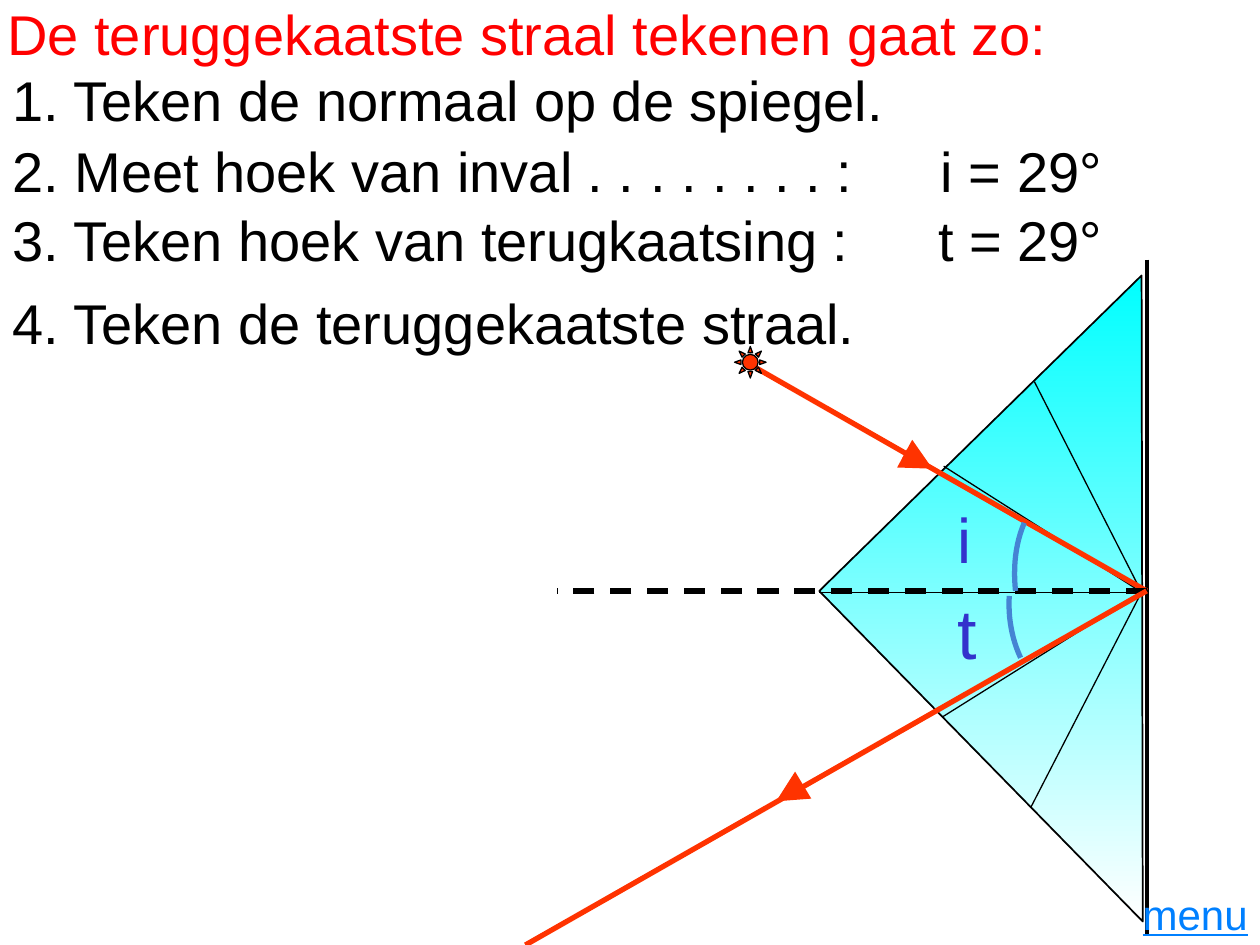
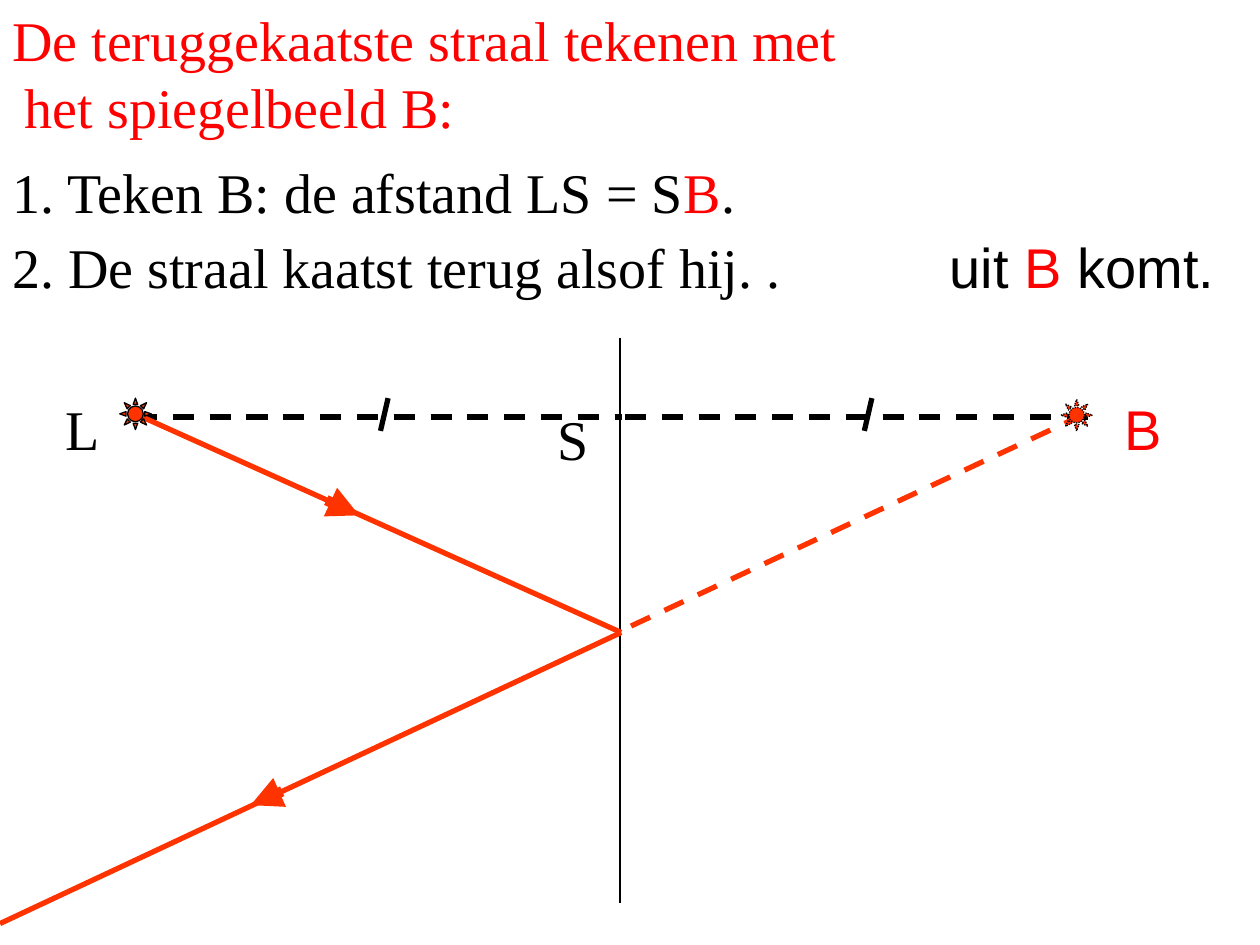
from lxml import etree
from pptx import Presentation
from pptx.dml.color import RGBColor
from pptx.enum.dml import MSO_LINE as DASH
from pptx.enum.shapes import MSO_CONNECTOR, MSO_SHAPE as SHAPE
from pptx.enum.text import MSO_ANCHOR as ANCHOR, PP_ALIGN as ALIGN
from pptx.oxml.ns import qn
from pptx.util import Inches, Pt

BLACK = RGBColor(0x00, 0x00, 0x00)
RED = RGBColor(0xFF, 0x00, 0x00)
RAY_RED = RGBColor(0xFF, 0x33, 0x00)
CYAN = RGBColor(0x00, 0xFF, 0xFF)
WHITE = RGBColor(0xFF, 0xFF, 0xFF)
ARC_BLUE = RGBColor(0x45, 0x84, 0xD3)
LABEL_BLUE = RGBColor(0x33, 0x33, 0xCC)
MENU_BLUE = RGBColor(0x00, 0x80, 0xFF)
SANS, SERIF = "Arial", "Times New Roman"


def add_line(page, start, end, color=BLACK, width=3, dash=None, arrow=False):
    line = page.shapes.add_connector(
        MSO_CONNECTOR.STRAIGHT, *(Inches(value) for value in (*start, *end)))
    line.line.color.rgb = color
    line.line.width = Pt(width)
    if dash:
        line.line.dash_style = dash
    if arrow:
        etree.SubElement(line.line._get_or_add_ln(), qn("a:tailEnd"), type="triangle")
    etree.SubElement(line._element.spPr, qn("a:effectLst"))


def add_text(page, area, parts, font=SANS, size=32, anchor=ANCHOR.MIDDLE):
    """Write one paragraph from (text, colour) parts."""
    box = page.shapes.add_textbox(*(Inches(value) for value in area))
    frame = box.text_frame
    frame.word_wrap = True
    frame.vertical_anchor = anchor
    para = frame.paragraphs[0]
    for text, color in parts:
        if para.runs and "\v" not in text:
            span = para.add_run()
            span.text = text
        else:
            para.text = text
        for span in para.runs[-1 - text.count("\v"):]:
            span.font.name = font
            span.font.size = Pt(size)
            span.font.color.rgb = color
    return para


deck = Presentation()
deck.slide_width, deck.slide_height = Inches(10), Inches(7.5)
angle_page, image_page = (deck.slides.add_slide(deck.slide_layouts[6]) for _ in range(2))

# Slide 1: protractor with its degree lines
protractor = angle_page.shapes.add_shape(
    SHAPE.RIGHT_TRIANGLE, Inches(7.23), Inches(2.96), Inches(3.67), Inches(3.58))
protractor.rotation = 45.6
protractor.shadow.inherit = False
protractor.fill.gradient()
protractor.fill.gradient_angle = 270
for stop, color, position in zip(protractor.fill.gradient_stops, (CYAN, WHITE), (0, 1)):
    stop.color.rgb = color
    stop.position = position
protractor._element.spPr.find(qn("a:gradFill")).set("rotWithShape", "0")
protractor.line.color.rgb = BLACK
protractor.line.width = Pt(1)
for degree_end in [(6.5, 4.7), (7.49, 3.7), (8.21, 3.03), (7.48, 5.69), (8.18, 6.41)]:
    add_line(angle_page, (9.06, 4.7), degree_end, width=0.75)

# Slide 1: mirror, normal and rays
hit = (9.1, 4.69)
add_line(angle_page, (9.1, 2.06), (9.1, 7.42), width=2.25)
add_line(angle_page, (6, 2.92), hit, RAY_RED)
add_line(angle_page, (7.18, 3.6), (7.4, 3.72), RAY_RED, 6, arrow=True)
add_line(angle_page, hit, (4.42, 4.69), dash=DASH.DASH)
add_line(angle_page, hit, (4.17, 7.5), RAY_RED)
add_line(angle_page, (6.36, 6.24), (6.16, 6.36), RAY_RED, 6, arrow=True)

# Slide 1: angle arcs, sampled from cubic curves
STEPS = 12
for curve in [
    [(8.13, 4.15), (8.06, 4.31), (8.04, 4.5), (8.06, 4.69)],
    [(8.01, 4.73), (8, 4.9), (8.03, 5.07), (8.1, 5.22)],
]:
    points = []
    for step in range(STEPS + 1):
        t = step / STEPS
        weights = ((1 - t) ** 3, 3 * t * (1 - t) ** 2, 3 * t * t * (1 - t), t ** 3)
        points.append(tuple(
            Inches(sum(weight * point[axis] for weight, point in zip(weights, curve)))
            for axis in (0, 1)))
    builder = angle_page.shapes.build_freeform(*points[0])
    builder.add_line_segments(points[1:], close=False)
    arc = builder.convert_to_shape()
    arc.shadow.inherit = False
    arc.fill.background()
    arc.line.color.rgb = ARC_BLUE
    arc.line.width = Pt(3)

# Slide 1: title, steps and labels
add_text(angle_page, (-0.04, 0.05, 10, 0.42),
         [("De teruggekaatste straal tekenen gaat zo:", RED)])
for text, area in [
    ("1. Teken de normaal op de spiegel.", (0, 0.58, 10, 0.42)),
    ("2. Meet hoek van inval . . . . . . . . :", (0, 1.06, 8.42, 0.58)),
    ("i = 29°", (7.37, 1.06, 1.83, 0.58)),
    ("3. Teken hoek van terugkaatsing :", (0, 1.56, 8.42, 0.67)),
    ("t = 29°", (7.35, 1.56, 1.8, 0.67)),
    ("4. Teken de teruggekaatste straal.", (0, 2.22, 10, 0.67)),
]:
    add_text(angle_page, area, [(text, BLACK)])
add_text(angle_page, (7.5, 3.92, 0.5, 0.71), [("i", LABEL_BLUE)], size=36, anchor=ANCHOR.TOP)
add_text(angle_page, (7.5, 4.63, 0.35, 0.77), [("t", LABEL_BLUE)], size=40, anchor=ANCHOR.TOP)
menu = add_text(angle_page, (8.86, 7, 1.14, 0.5), [("menu", MENU_BLUE)],
                size=24, anchor=ANCHOR.TOP)
menu.alignment = ALIGN.RIGHT
menu.runs[0].font.underline = True

# Slide 2: mirror and the equal distances on both sides
add_line(image_page, (4.92, 2.68), (4.92, 7.17), width=0.75)
for left, right, tick in [(1.08, 4.94, 3.02), (4.96, 8.67, 6.86)]:
    add_line(image_page, (left, 3.31), (right, 3.31), dash=DASH.DASH)
    add_line(image_page, (tick + 0.06, 3.16), (tick, 3.42))

# Slide 2: rays
hit = (4.93, 5.02)
add_line(image_page, (1.13, 3.31), hit, RAY_RED)
add_line(image_page, (2.59, 3.97), (2.85, 4.09), RAY_RED, 6, arrow=True)
add_line(image_page, hit, (0, 7.33), RAY_RED)
add_line(image_page, (2.24, 6.28), (1.99, 6.39), RAY_RED, 6, arrow=True)
add_line(image_page, (8.6, 3.29), (4.92, 5.01), RAY_RED, dash=DASH.DASH)

# Slide 2: title, steps and labels
title = add_text(image_page, (0, 0.08, 10, 0.99),
                 [("De teruggekaatste straal tekenen met\vhet spiegelbeeld B:", RED)], SERIF)
indent = title._p.get_or_add_pPr()
indent.set("marL", str(Inches(0.1)))
indent.set("indent", str(Inches(-0.1)))
add_text(image_page, (0, 1.15, 10, 0.74),
         [("1. Teken B: de afstand LS = S", BLACK), ("B", RED), (".", BLACK)], SERIF)
add_text(image_page, (0, 1.78, 10, 0.67),
         [("2. De straal kaatst terug alsof hij. .", BLACK)], SERIF)
add_text(image_page, (7.44, 1.78, 2.56, 0.67),
         [("uit ", BLACK), ("B ", RED), ("komt.", BLACK)])
for text, left, top, width, font, color in [
    ("L", 0.42, 3.08, 0.48, SERIF, BLACK),
    ("S", 4.33, 3.16, 0.75, SERIF, BLACK),
    ("B", 8.83, 3.08, 0.67, SANS, RED),
]:
    add_text(image_page, (left, top, width, 0.64), [(text, color)], font, anchor=ANCHOR.TOP)

# Light sources on both slides, dotted for the mirror image
for page, left, top, dash in [
    (angle_page, 5.83, 2.75, DASH.SOLID),
    (image_page, 0.95, 3.16, DASH.SOLID),
    (image_page, 8.42, 3.17, DASH.ROUND_DOT),
]:
    sun = page.shapes.add_shape(
        SHAPE.SUN, Inches(left), Inches(top), Inches(0.25), Inches(0.25))
    sun.shadow.inherit = False
    sun.fill.solid()
    sun.fill.fore_color.rgb = RAY_RED
    sun.line.color.rgb = BLACK
    sun.line.width = Pt(0.75)
    sun.line.dash_style = dash

deck.save("out.pptx")
